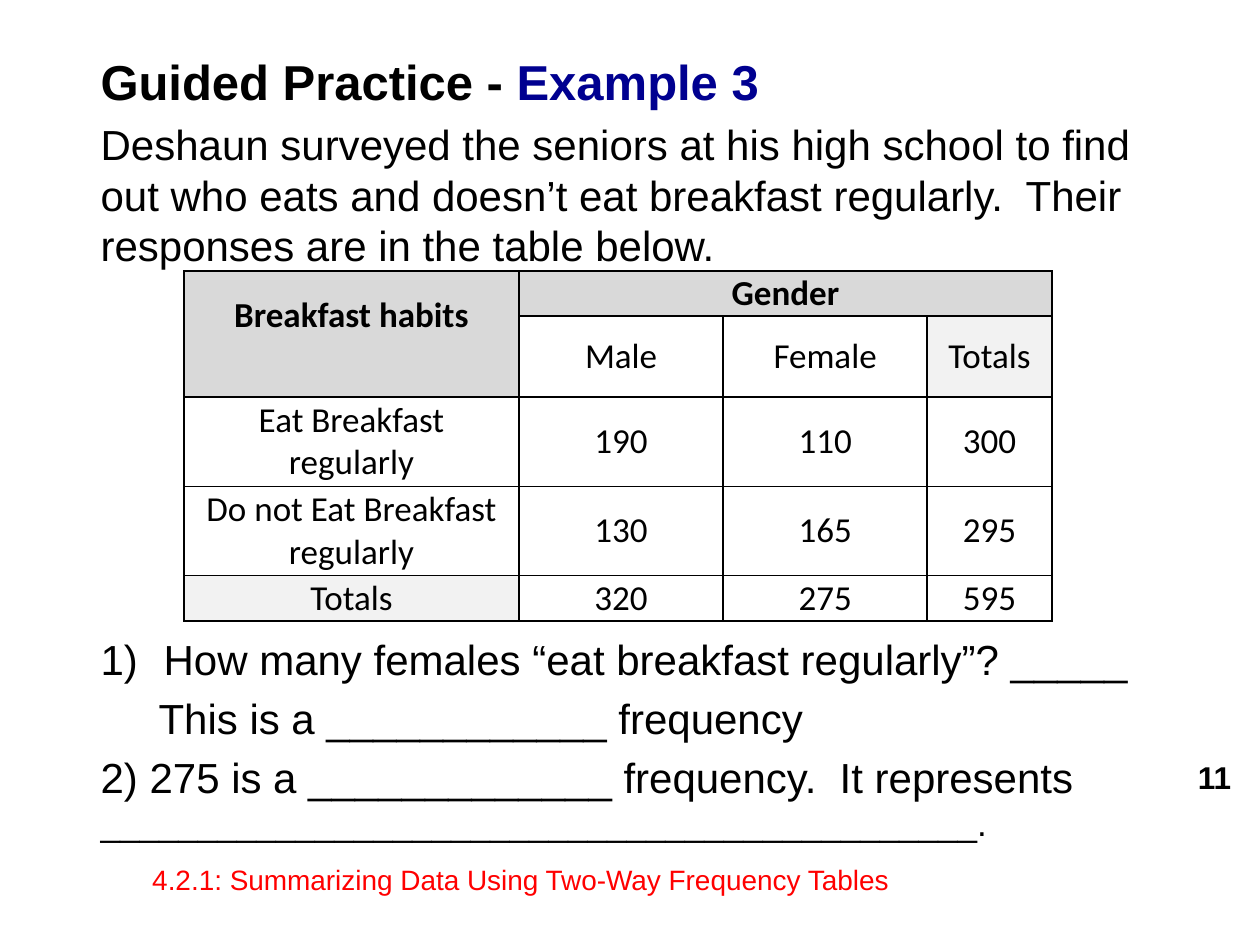
import dataclasses

import pptx
import pptx.dml.color
import pptx.enum.text
import pptx.oxml
import pptx.oxml.ns
import pptx.util

Inches = pptx.util.Inches
Pt = pptx.util.Pt
ALIGN = pptx.enum.text.PP_ALIGN
MIDDLE = pptx.enum.text.MSO_ANCHOR.MIDDLE


@dataclasses.dataclass(frozen=True)
class Theme:
    ink: str = "000000"
    accent: str = "000090"
    footer: str = "FF0000"
    header_fill: str = "D9D9D9"
    total_fill: str = "F2F2F2"
    plain_fill: str = "FFFFFF"
    body_font: str = "Arial"
    table_font: str = "Calibri"
    title_size: int = 28
    body_size: int = 24
    table_size: int = 20
    number_size: int = 18
    footer_size: int = 16
    line_spacing: float = 1.0
    space_before: float = 4.8


THEME = Theme()
COLUMNS = (2.66, 1.62, 1.62, 0.99)
ROWS = (0.36, 0.64, 0.71, 0.71, 0.36)
HABITS = (
    ("Breakfast habits", "Gender", "", ""),
    ("", "Male", "Female", "Totals"),
    ("Eat Breakfast regularly", "190", "110", "300"),
    ("Do not Eat Breakfast regularly", "130", "165", "295"),
    ("Totals", "320", "275", "595"),
)


def apply(target, formats):
    for name, value in formats.items():
        setattr(target, name, value)


def add_span(para, text, size, color=THEME.ink, bold=False, font=THEME.body_font):
    span = para.add_run()
    span.text = text
    apply(span.font, {"name": font, "size": Pt(size), "bold": bold})
    span.font.color.rgb = pptx.dml.color.RGBColor.from_string(color)


def add_box(page, left, top, width, height, **formats):
    box = page.shapes.add_textbox(*map(Inches, (left, top, width, height)))
    apply(box.text_frame, {"word_wrap": True, **formats})
    return box.text_frame


def add_body_para(frame, spans, first=False):
    """Add a paragraph of (text, size, color, bold) spans."""
    para = frame.paragraphs[0] if first else frame.add_paragraph()
    before = Pt(0 if first else THEME.space_before)
    apply(para, {"line_spacing": THEME.line_spacing, "space_before": before})
    for span in spans:
        add_span(para, *span)
    return para


def indent(para, left, first_line=0):
    properties = para._p.get_or_add_pPr()
    properties.set("marL", str(Inches(left)))
    properties.set("indent", str(Inches(first_line)))
    return properties


def add_intro(page):
    frame = add_box(page, 0.7, 0.36, 8.91, 1.79)
    add_body_para(frame, [
        ("Guided Practice - ", THEME.title_size, THEME.ink, True),
        ("Example 3", THEME.title_size, THEME.accent, True),
    ], first=True)
    add_body_para(frame, [(
        "Deshaun surveyed the seniors at his high school to find out who eats "
        "and doesn’t eat breakfast regularly.  Their responses are in the "
        "table below.", THEME.body_size)])


def add_questions(page):
    frame = add_box(page, 0.7, 4.98, 8.91, 1.85)
    size = THEME.body_size
    numbered = add_body_para(frame, [
        ("How many females “eat breakfast regularly”? " + "_" * 5, size)], first=True)
    properties = indent(numbered, 0.5, -0.5)
    number = pptx.oxml.parse_xml(
        f'<a:buAutoNum {pptx.oxml.ns.nsdecls("a")} type="arabicParenR"/>')
    properties.append(number)
    follow_up = add_body_para(frame, [(f"This is a {'_' * 12} frequency", size)])
    indent(follow_up, 0.46)
    add_body_para(frame, [
        (f"2) 275 is a {'_' * 13} frequency.  It represents ", size),
        ("_" * 45 + ".", THEME.table_size),
    ])


def add_borders(cell):
    properties = cell._tc.get_or_add_tcPr()
    for side in ("lnL", "lnR", "lnT", "lnB"):
        properties.append(pptx.oxml.parse_xml(
            f'<a:{side} {pptx.oxml.ns.nsdecls("a")} w="{Pt(1)}"><a:solidFill>'
            f'<a:srgbClr val="{THEME.ink}"/></a:solidFill></a:{side}>'))


def cell_fill(row, column):
    if row == 0 or (row, column) == (1, 0):
        return THEME.header_fill
    if (row, column) in ((1, 3), (4, 0)):
        return THEME.total_fill
    return THEME.plain_fill


def add_habits_table(page):
    table = page.shapes.add_table(
        len(ROWS), len(COLUMNS), Inches(1.46), Inches(2.15),
        Inches(sum(COLUMNS)), Inches(sum(ROWS))).table
    apply(table, {"first_row": False, "horz_banding": False})
    for column, width in zip(table.columns, COLUMNS):
        column.width = Inches(width)
    for row, height in zip(table.rows, ROWS):
        row.height = Inches(height)
    side = Inches(0.07)
    for r, texts in enumerate(HABITS):
        for c, text in enumerate(texts):
            cell = table.cell(r, c)
            apply(cell, {"margin_left": side, "margin_right": side, "margin_top": 0,
                         "margin_bottom": 0, "vertical_anchor": MIDDLE})
            add_borders(cell)
            cell.fill.solid()
            cell.fill.fore_color.rgb = pptx.dml.color.RGBColor.from_string(cell_fill(r, c))
            para = cell.text_frame.paragraphs[0]
            apply(para, {"alignment": ALIGN.CENTER})
            if text:
                add_span(para, text, THEME.table_size, bold=r == 0, font=THEME.table_font)
    corner = table.cell(0, 0)
    corner.margin_bottom = Inches(0.29)
    corner.merge(table.cell(1, 0))
    table.cell(0, 1).merge(table.cell(0, 3))


def add_label(page, place, alignment, *span):
    para = add_box(page, *place, vertical_anchor=MIDDLE).paragraphs[0]
    para.alignment = alignment
    add_span(para, *span)


def main():
    deck = pptx.Presentation()
    apply(deck, {"slide_width": Inches(10), "slide_height": Inches(7.5)})
    page = deck.slides.add_slide(deck.slide_layouts[6])
    add_intro(page)
    add_questions(page)
    add_label(page, (9.07, 6.01, 0.8, 0.31), ALIGN.RIGHT,
              "11", THEME.number_size, THEME.ink, True)
    add_label(page, (1.11, 6.83, 6.09, 0.29), ALIGN.LEFT,
              "4.2.1: Summarizing Data Using Two-Way Frequency Tables",
              THEME.footer_size, THEME.footer)
    add_habits_table(page)
    deck.save("out.pptx")


if __name__ == "__main__":
    main()
